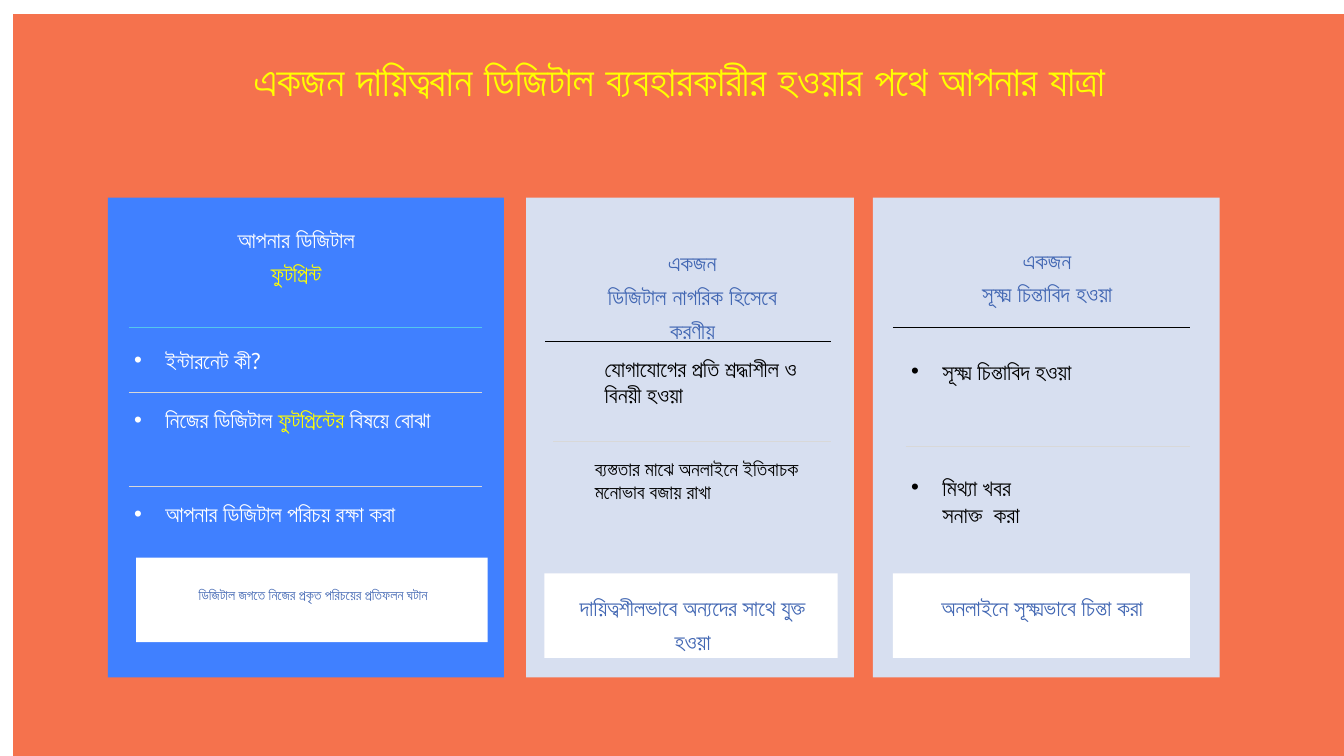
"""Build the slide on becoming a responsible digital user."""
import pptx
import pptx.dml.color
import pptx.enum.shapes
import pptx.enum.text
import pptx.oxml.ns
import pptx.util
from lxml import etree

Cm = pptx.util.Cm
Pt = pptx.util.Pt
RGBColor = pptx.dml.color.RGBColor
qn = pptx.oxml.ns.qn
PP_ALIGN = pptx.enum.text.PP_ALIGN

WHITE = RGBColor(0xFF, 0xFF, 0xFF)
BLACK = RGBColor(0x00, 0x00, 0x00)
YELLOW = RGBColor(0xFF, 0xFF, 0x00)
ORANGE = RGBColor(0xF5, 0x72, 0x4D)
BLUE = RGBColor(0x40, 0x80, 0xFF)
PALE = RGBColor(0xD7, 0xDF, 0xF0)
NAVY = RGBColor(0x42, 0x67, 0xB3)
CYAN = RGBColor(0x54, 0xC6, 0xEC)
GREY = RGBColor(0xD8, 0xD8, 0xD8)
FONT = "Lato"


def add_text(p, text, size=16, color=BLACK, bold=False):
    """Add formatted text to a paragraph, breaking lines at newlines."""
    for i, line in enumerate(text.split("\n")):
        if i:
            p.add_line_break()
        r = p.add_run()
        r.text = line
        r.font.name = FONT
        r.font.size = Pt(size)
        r.font.bold = bold
        r.font.color.rgb = color


class Deck:
    """Hold the presentation, its style and the current slide."""

    def __init__(self):
        """Start a wide presentation with one title-only slide."""
        self.prs = pptx.Presentation()
        self.prs.slide_width, self.prs.slide_height = Cm(33.87), Cm(19.05)
        self.s = self.prs.slides.add_slide(self.prs.slide_layouts[5])

    def rect(self, x, y, w, h, color):
        """Add a plain filled rectangle."""
        sp = self.s.shapes.add_shape(
            pptx.enum.shapes.MSO_SHAPE.RECTANGLE, Cm(x), Cm(y), Cm(w), Cm(h))
        sp.shadow.inherit = False
        sp.fill.solid()
        sp.fill.fore_color.rgb = color
        sp.line.fill.background()

    def line(self, x1, x2, y, color):
        """Add a thin horizontal rule."""
        ln = self.s.shapes.add_connector(
            pptx.enum.shapes.MSO_CONNECTOR.STRAIGHT, Cm(x1), Cm(y), Cm(x2), Cm(y))
        ln.line.color.rgb = color
        ln.line.width = Pt(0.75)
        etree.SubElement(ln.element.spPr, qn("a:effectLst"))

    def frame(self, sp, inset):
        """Set wrapping, anchor and margins of a text frame."""
        tf = sp.text_frame
        tf.word_wrap = True
        tf.auto_size = pptx.enum.text.MSO_AUTO_SIZE.SHAPE_TO_FIT_TEXT
        tf.vertical_anchor = pptx.enum.text.MSO_ANCHOR.TOP
        tf.margin_left = tf.margin_right = Cm(inset)
        tf.margin_top = tf.margin_bottom = Cm(0.13)
        return tf

    def title(self, x, y, w, h, text):
        """Place the title placeholder in front of the backdrop."""
        sp = self.s.shapes.title
        sp.left, sp.top, sp.width, sp.height = Cm(x), Cm(y), Cm(w), Cm(h)
        sp.element.getparent().append(sp.element)
        p = self.frame(sp, 0.25).paragraphs[0]
        p.alignment = PP_ALIGN.CENTER
        p.line_spacing = 0.97
        add_text(p, text, size=30, color=YELLOW, bold=True)

    def centred(self, x, y, w, h, paragraphs, spacing=1.25):
        """Add centred paragraphs, each a list of (text, format) runs."""
        sp = self.s.shapes.add_textbox(Cm(x), Cm(y), Cm(w), Cm(h))
        tf = self.frame(sp, 0.25)
        for i, runs in enumerate(paragraphs):
            p = tf.add_paragraph() if i else tf.paragraphs[0]
            p.alignment = PP_ALIGN.CENTER
            p.line_spacing = spacing
            for text, fmt in runs:
                add_text(p, text, **fmt)

    def item(self, x, y, w, h, runs, bullet=None):
        """Add an indented item, with a bullet if its colour is given."""
        sp = self.s.shapes.add_textbox(Cm(x), Cm(y), Cm(w), Cm(h))
        p = self.frame(sp, 0.13).paragraphs[0]
        pPr = p._p.get_or_add_pPr()
        indent = Cm(0.79 if bullet else 1.27)
        pPr.set("marL", str(indent))
        pPr.set("indent", str(-indent if bullet else 0))
        if bullet:
            clr = etree.SubElement(pPr, qn("a:buClr"))
            etree.SubElement(clr, qn("a:srgbClr"), val=str(bullet))
            etree.SubElement(pPr, qn("a:buFont"), typeface="Arial")
            etree.SubElement(pPr, qn("a:buChar"), char="•")
        for text, fmt in runs:
            add_text(p, text, **fmt)


def main():
    """Draw the slide and save it."""
    deck = Deck()
    white, black, navy = {"color": WHITE}, {"color": BLACK}, {"color": NAVY}
    head, mark = {"color": NAVY, "bold": True}, {"color": YELLOW, "bold": True}

    deck.rect(0.33, 0.36, 33.87, 19.05, ORANGE)
    for x, w, color in ((22, 8.74, PALE), (13.26, 8.26, PALE), (2.72, 9.98, BLUE)):
        deck.rect(x, 4.98, w, 12.09, color)
    for x, y, w in ((3.43, 14.05, 8.86), (22.5, 14.45, 7.49), (13.72, 14.45, 7.39)):
        deck.rect(x, y, w, 2.13, WHITE)

    deck.title(1.22, 1.32, 31.8, 2.62,
               "একজন দায়িত্ববান ডিজিটাল ব্যবহারকারীর হওয়ার পথে আপনার যাত্রা")

    deck.item(3.25, 8.61, 7.39, 0.94, [("ইন্টারনেট কী?", white)], WHITE)
    deck.item(3.25, 10.11, 7.82, 1.63,
              [("নিজের ডিজিটাল ", white), ("ফুটপ্রিন্টের", mark),
               (" বিষয়ে বোঝা", white)], WHITE)
    deck.item(3.25, 12.47, 8.66, 0.94,
              [("আপনার ডিজিটাল পরিচয় রক্ষা করা", white)], WHITE)
    deck.item(13.84, 8.81, 7.09, 2.31,
              [("যোগাযোগের প্রতি শ্রদ্ধাশীল ও বিনয়ী হওয়া", black)])
    deck.item(13.59, 11.38, 7.67, 2.64,
              [("ব্যস্ততার মাঝে অনলাইনে ইতিবাচক মনোভাব বজায় রাখা", {"size": 14})])
    deck.item(22.83, 8.89, 4.83, 1.63, [("সূক্ষ্ম চিন্তাবিদ হওয়া", black)], BLACK)
    deck.item(22.83, 11.81, 3.89, 1.63, [("মিথ্যা খবর সনাক্ত  করা", black)], BLACK)

    deck.centred(5.05, 5.41, 4.83, 3.1,
                 [[("আপনার ডিজিটাল ", {"color": WHITE, "bold": True}),
                   ("ফুটপ্রিন্ট", mark)]])
    deck.centred(14.63, 5.99, 5.64, 2.39,
                 [[("একজন\nডিজিটাল নাগরিক হিসেবে করণীয়", head)]])
    deck.centred(23.34, 5.92, 6.1, 1.63,
                 [[("একজন", head)], [("সূক্ষ্ম চিন্তাবিদ হওয়া", head)]])
    deck.centred(4.04, 14.22, 7.7, 2.39,
                 [[("ডিজিটাল জগতে নিজের প্রকৃত পরিচয়ের প্রতিফলন ঘটান",
                    {"size": 10, "color": NAVY})]], spacing=2.0)
    deck.centred(14.05, 14.68, 6.81, 1.68,
                 [[("দায়িত্বশীলভাবে অন্যদের সাথে যুক্ত হওয়া", navy)]])
    deck.centred(23.24, 14.68, 6.05, 2.39,
                 [[("অনলাইনে সূক্ষ্মভাবে চিন্তা করা", navy)]])

    for x1, x2, y, color in (
            (3.25, 12.14, 8.26, CYAN), (13.74, 20.93, 8.61, BLACK),
            (22.5, 30, 8.26, BLACK), (3.25, 12.14, 12.27, GREY),
            (13.94, 20.93, 11.13, GREY), (22.83, 30, 11.25, GREY),
            (3.25, 12.14, 9.88, GREY)):
        deck.line(x1, x2, y, color)

    deck.prs.save("out.pptx")


if __name__ == "__main__":
    main()
